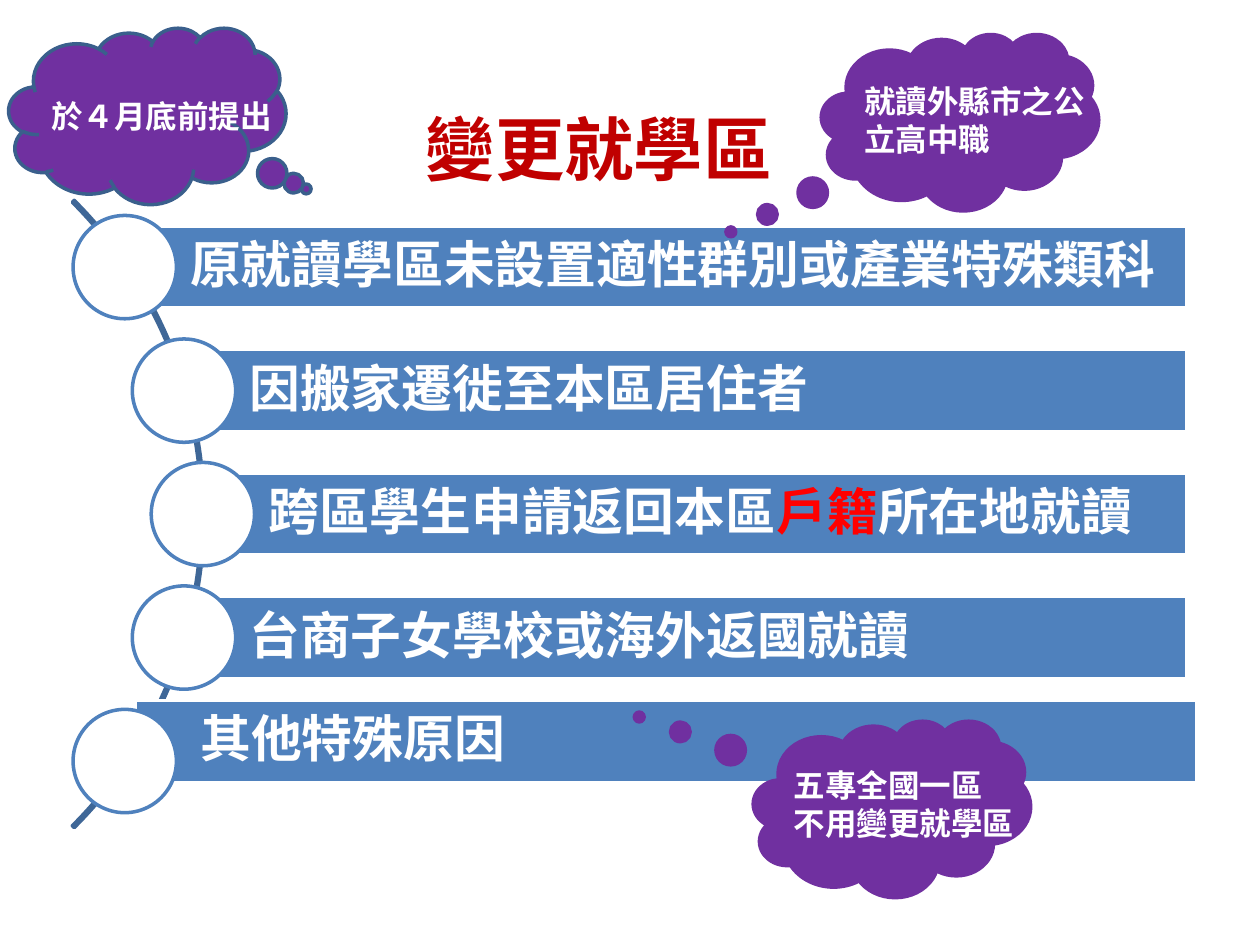
from typing import NamedTuple

from pptx import Presentation
from pptx.dml.color import RGBColor
from pptx.enum.shapes import MSO_SHAPE
from pptx.enum.text import MSO_ANCHOR, PP_ALIGN
from pptx.util import Inches, Pt

ARC = MSO_SHAPE.BLOCK_ARC
CLOUD = MSO_SHAPE.CLOUD_CALLOUT
OVAL = MSO_SHAPE.OVAL
RECT = MSO_SHAPE.RECTANGLE
MIDDLE = MSO_ANCHOR.MIDDLE
TOP = MSO_ANCHOR.TOP
LEFT = PP_ALIGN.LEFT
CENTER = PP_ALIGN.CENTER

WHITE, BLUE, PURPLE, RED = "FFFFFF", "4F81BD", "7030A0", "FF0000"
FONT = "Calibri"
RIGHT, PITCH, DISC, BAR = 9.42, 0.98, 0.82, 0.65


class Box(NamedTuple):
    left: float
    top: float
    width: float
    height: float


class Reason(NamedTuple):
    disc: float
    runs: list[str]
    bar: Box | None = None


class Cloud(NamedTuple):
    box: Box
    tail: list[float]
    line: str
    label: Box
    lines: list[str]


REASONS = [
    Reason(0.58, ["原就讀學區未設置適性群別或產業特殊類科"]),
    Reason(1.05, ["因搬家遷徙至本區居住者"]),
    Reason(1.2, ["跨區學生申請返回本區", "戶籍", "所在地就讀"]),
    Reason(1.05, ["台商子女學校或海外返國就讀"]),
    Reason(0.58, ["其他特殊原因"], Box(1.07, 5.56, 8.43, BAR)),
]
FIRST = Cloud(Box(0.07, 0.22, 2.2, 1.4), [0.573, 0.414], "3A5F8C",
              Box(0.31, 0.72, 1.97, 0.4), ["於４月底前提出"])
OTHERS = [
    Cloud(Box(6.52, 0.27, 2.2, 1.4), [-0.827, 0.622], PURPLE,
          Box(6.76, 0.6, 1.97, 1.01), ["就讀外縣市之公立高中職"]),
    Cloud(Box(5.98, 5.72, 2.2, 1.4), [-0.912, -0.521], PURPLE,
          Box(6.2, 6.03, 1.97, 0.71), ["五專全國一區", "不用變更就學區"]),
]


def color(code: str) -> RGBColor:
    return RGBColor.from_string(code)


def style(para, size: float, code: str, font: str = FONT) -> None:
    para.font.name = font
    para.font.size = Pt(size)
    para.font.bold = True
    para.font.color.rgb = color(code)


def add_shape(slide, kind, box: Box, fill: str | None, line: str, adjust=()):
    shape = slide.shapes.add_shape(kind, *map(Inches, box))
    shape.shadow.inherit = False
    for i, value in enumerate(adjust):
        shape.adjustments[i] = value
    if fill:
        shape.fill.solid()
        shape.fill.fore_color.rgb = color(fill)
    else:
        shape.fill.background()
    shape.line.color.rgb = color(line)
    shape.line.width = Pt(2)
    return shape


def add_label(slide, box: Box, lines: list[str]):
    frame = slide.shapes.add_textbox(*map(Inches, box)).text_frame
    frame.word_wrap = True
    frame.vertical_anchor = TOP
    frame.text = "\n".join(lines)
    for para in frame.paragraphs:
        style(para, 18, WHITE)
    return frame


def add_title(slide) -> None:
    frame = add_label(slide, Box(2.27, 0.92, 4.97, 1.25), ["變更就學區"])
    frame.margin_top = 0
    para = frame.paragraphs[0]
    para.alignment = CENTER
    para.line_spacing = 0.9
    style(para, 39.6, "C00000", "Noto Sans CJK SC")


def add_cloud(slide, cloud: Cloud) -> None:
    add_shape(slide, CLOUD, cloud.box, PURPLE, cloud.line, cloud.tail)
    add_label(slide, cloud.label, cloud.lines)


def add_reason(slide, row: int, item: Reason) -> None:
    top = 1.71 + row * PITCH
    left = item.disc + DISC / 2
    box = item.bar or Box(left, top + (DISC - BAR) / 2, RIGHT - left, BAR)
    frame = add_shape(slide, RECT, box, BLUE, WHITE).text_frame
    frame.word_wrap = True
    frame.vertical_anchor = MIDDLE
    frame.margin_left = Inches(0.52)
    frame.margin_right = frame.margin_top = frame.margin_bottom = Inches(0.08)
    para = frame.paragraphs[0]
    para.alignment = LEFT
    para.line_spacing = 0.9
    style(para, 29, WHITE)
    for i, text in enumerate(item.runs):
        run = para.add_run()
        run.text = text
        if i == 1:
            run.font.color.rgb = color(RED)
    add_shape(slide, OVAL, Box(item.disc, top, DISC, DISC), WHITE, BLUE)


def main() -> None:
    deck = Presentation()
    deck.slide_width = Inches(10)
    deck.slide_height = Inches(7.5)
    slide = deck.slides.add_slide(deck.slide_layouts[6])
    add_title(slide)
    add_cloud(slide, FIRST)
    add_shape(slide, ARC, Box(-5.42, 0.56, 7.04, 7.04), None, "3F6797",
              [189, 27, 0.003])
    for row, item in enumerate(REASONS):
        add_reason(slide, row, item)
    for cloud in OTHERS:
        add_cloud(slide, cloud)
    deck.save("out.pptx")


if __name__ == "__main__":
    main()
